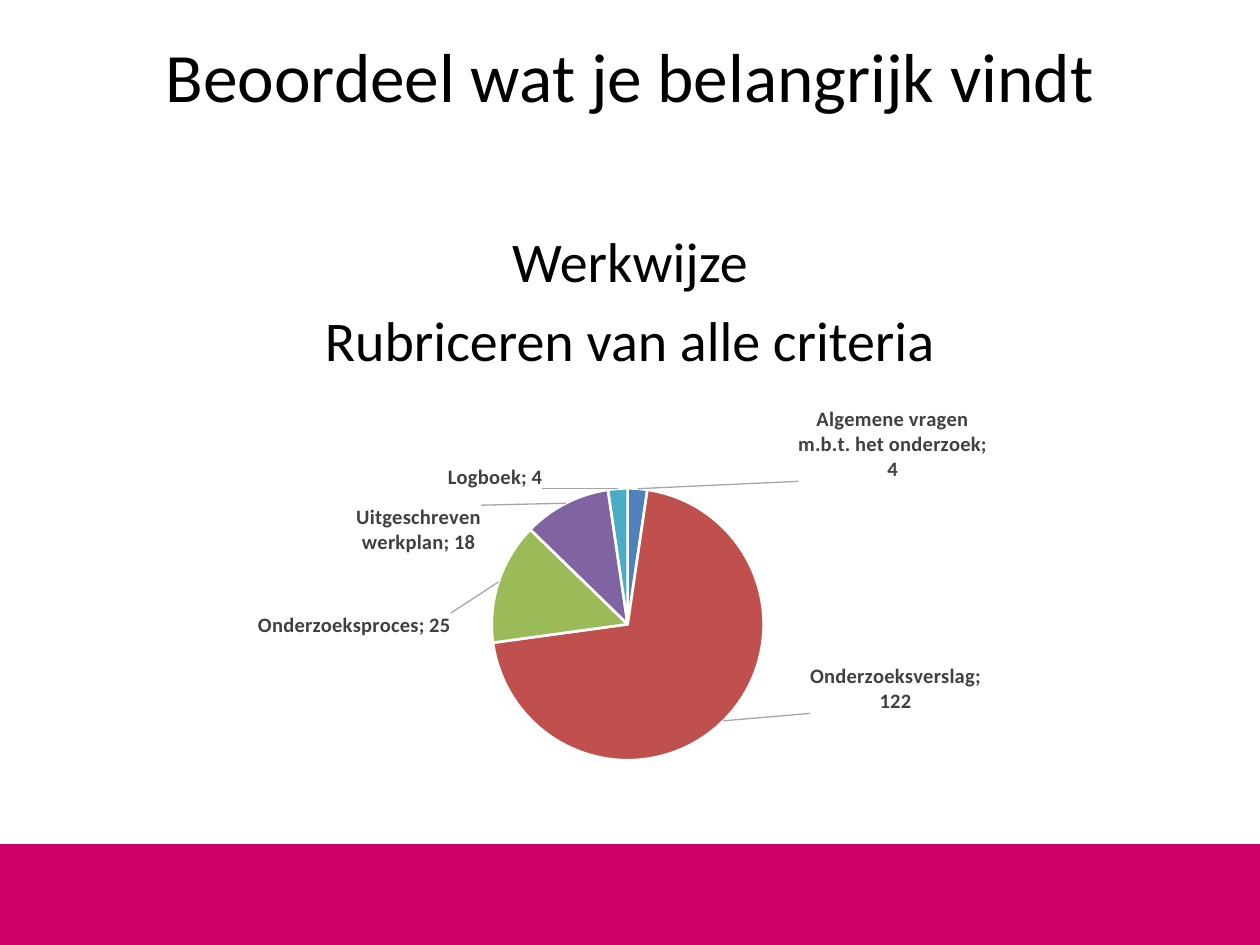
from lxml.etree import SubElement
from pptx import Presentation
from pptx.chart.data import CategoryChartData
from pptx.dml.color import RGBColor
from pptx.enum.chart import XL_CHART_TYPE, XL_LABEL_POSITION
from pptx.enum.shapes import MSO_SHAPE
from pptx.enum.text import MSO_ANCHOR, PP_ALIGN
from pptx.oxml import parse_xml
from pptx.oxml.ns import nsdecls, qn
from pptx.util import Inches, Pt


def color(hex_string):
    return RGBColor.from_string(hex_string)


def format_text(box, size):
    for para in box.text_frame.paragraphs:
        para.alignment = PP_ALIGN.CENTER
        for span in para.runs:
            span.font.name = "Calibri"
            span.font.size = Pt(size)
            span.font.color.rgb = color("000000")


deck = Presentation()
deck.slide_width, deck.slide_height = Inches(10), Inches(7.5)
page = deck.slides.add_slide(deck.slide_layouts[1])

# Footer band
band = page.shapes.add_shape(MSO_SHAPE.RECTANGLE, 0, Inches(6.7), deck.slide_width, Inches(0.8))
band.shadow.inherit = False
band.fill.solid()
band.fill.fore_color.rgb = color("CC0066")
band.line.fill.background()

# Title and body
title, body = page.placeholders
title.left, title.top, title.width, title.height = map(Inches, (0.5, 0.26, 9, 1.25))
title.text_frame.text = "Beoordeel wat je belangrijk vindt"
title.text_frame.vertical_anchor = MSO_ANCHOR.TOP
title.text_frame.margin_top = 0
format_text(title, 39.6)

body.left, body.top, body.width, body.height = map(Inches, (0.5, 1.75, 9, 4.95))
body.text_frame.text = "Werkwijze\nRubriceren van alle criteria"
for para in body.text_frame.paragraphs:
    properties = para._p.get_or_add_pPr()
    properties.set("marL", "0")
    properties.set("indent", "0")
    SubElement(properties, qn("a:buNone"))
body.text_frame.paragraphs[1].space_before = Pt(6.4)
format_text(body, 32)

# Category, value, colour, label shift as shares of the chart's width and height
slices = [
    ("Algemene vragen m.b.t. het onderzoek", 4, "4F81BD", 0.25, 0),
    ("Onderzoeksverslag", 122, "C0504D", 0.08, -0.15),
    ("Onderzoeksproces", 25, "9BBB59", -0.04, 0.14),
    ("Uitgeschreven werkplan", 18, "8064A2", -0.08, 0.14),
    ("Logboek", 4, "4BACC6", -0.12, 0.02),
]
chart_data = CategoryChartData()
chart_data.categories = [entry[0] for entry in slices]
chart_data.add_series("Series 1", [entry[1] for entry in slices])
chart = page.shapes.add_chart(
    XL_CHART_TYPE.PIE, Inches(0.74), Inches(3.08), Inches(8.08), Inches(3.32), chart_data
).chart
chart.has_legend = False
chart.has_title = False
chart.font.name = "Calibri"
chart.font.size = Pt(10)
chart.font.color.rgb = color("000000")

plot = chart.plots[0]
plot.vary_by_categories = True
series = plot.series[0]
labels = series.data_labels
labels.show_value = True
labels.show_category_name = True

label_targets = [labels]
for index, (name, value, fill, shift_x, shift_y) in enumerate(slices):
    point = series.points[index]
    point.format.fill.solid()
    point.format.fill.fore_color.rgb = color(fill)
    point.format.line.color.rgb = color("FFFFFF")
    point.format.line.width = Pt(1.5)
    label = point.data_label
    label.position = XL_LABEL_POSITION.OUTSIDE_END
    label_targets.append(label)
    element = label._dLbl
    element.find(qn("c:showCatName")).set("val", "1")
    SubElement(element, qn("c:separator")).text = "; "
    element.find(qn("c:idx")).addnext(parse_xml(
        f'<c:layout {nsdecls("c")}><c:manualLayout>'
        f'<c:x val="{shift_x}"/><c:y val="{shift_y}"/></c:manualLayout></c:layout>'
    ))

for label in label_targets:
    label.position = XL_LABEL_POSITION.OUTSIDE_END
    label.font.name = "Calibri"
    label.font.size = Pt(11.7)
    label.font.bold = True
    label.font.color.rgb = color("404040")

# Separator and grey leader lines close the series' label settings
label_settings = labels._element
for old in label_settings.findall(qn("c:showLeaderLines")):
    label_settings.remove(old)
SubElement(label_settings, qn("c:separator")).text = "; "
SubElement(label_settings, qn("c:showLeaderLines")).set("val", "1")
label_settings.append(parse_xml(
    f'<c:leaderLines {nsdecls("c", "a")}><c:spPr><a:ln w="9525"><a:solidFill>'
    '<a:srgbClr val="A6A6A6"/></a:solidFill></a:ln></c:spPr></c:leaderLines>'
))

# Fixed place of the pie inside the chart
plot_area = chart._chartSpace.chart.plotArea
for old in plot_area.findall(qn("c:layout")):
    plot_area.remove(old)
plot_area.insert(0, parse_xml(
    f'<c:layout {nsdecls("c")}><c:manualLayout><c:layoutTarget val="inner"/>'
    '<c:xMode val="edge"/><c:yMode val="edge"/><c:x val="0.39"/><c:y val="0.24"/>'
    '<c:w val="0.27"/><c:h val="0.65"/></c:manualLayout></c:layout>'
))

deck.save("out.pptx")
